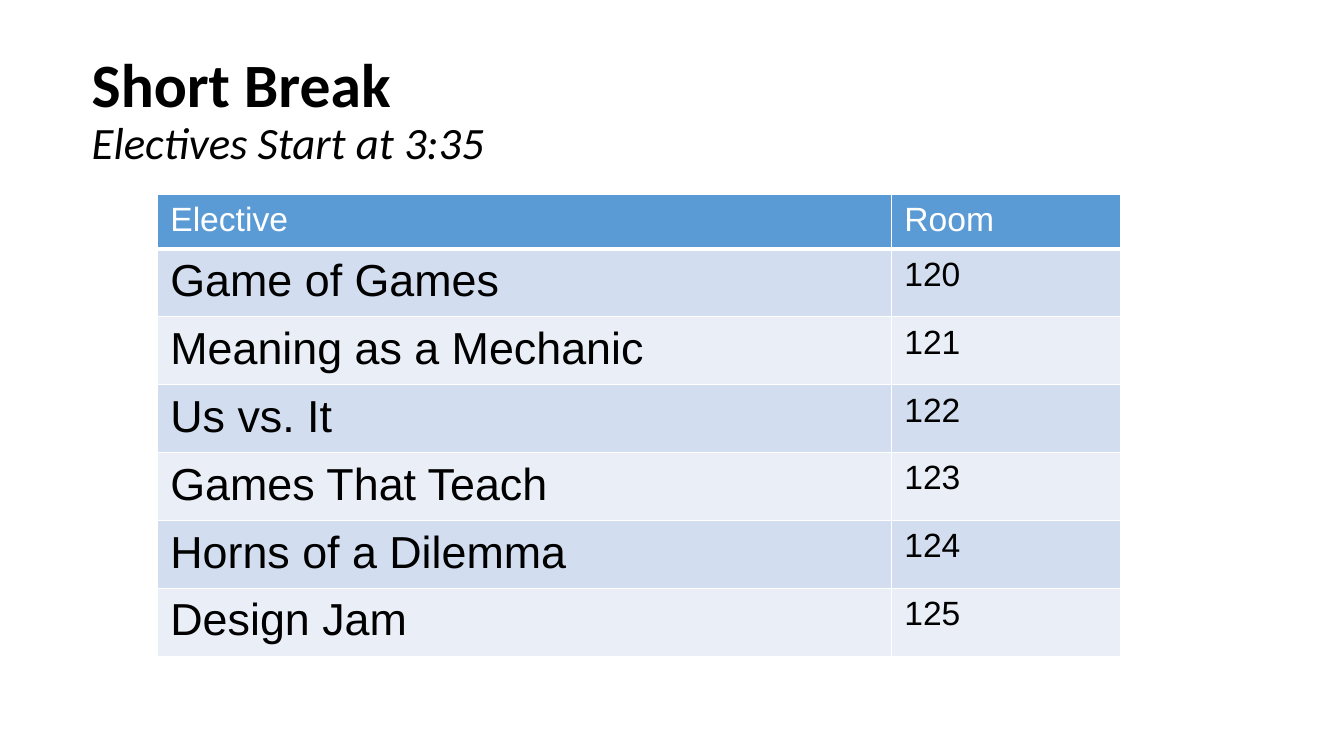
from lxml import etree
from pptx import Presentation
from pptx.dml.color import RGBColor
from pptx.enum import text
from pptx.oxml import ns
from pptx.util import Inches, Pt

BLACK = RGBColor(0x00, 0x00, 0x00)
WHITE = RGBColor(0xFF, 0xFF, 0xFF)
HEADER_BLUE = RGBColor(0x5B, 0x9B, 0xD5)
BAND_DARK = RGBColor(0xD2, 0xDE, 0xEF)
BAND_LIGHT = RGBColor(0xEA, 0xEF, 0xF7)

ELECTIVES = ["Game of Games", "Meaning as a Mechanic", "Us vs. It",
             "Games That Teach", "Horns of a Dilemma", "Design Jam"]
FIRST_ROOM = 120
INSETS = {"margin_left": Inches(0.13), "margin_right": Inches(0.13),
          "margin_top": Inches(0.07), "margin_bottom": Inches(0.07)}


def apply(target, values):
    for name, value in values.items():
        setattr(target, name, value)


def add_run(paragraph, words, color, **font_values):
    run = paragraph.add_run()
    run.text = words
    run.font.color.rgb = color
    apply(run.font, font_values)


def set_borders(cell, **widths):
    """Draw white borders; widths are points by side, in schema order."""
    properties = cell._tc.get_or_add_tcPr()
    for index, (side, points) in enumerate(widths.items()):
        line = etree.Element(ns.qn(f"a:ln{side}"), w=str(Pt(points)))
        fill = etree.SubElement(line, ns.qn("a:solidFill"))
        etree.SubElement(fill, ns.qn("a:srgbClr"), val=str(WHITE))
        properties.insert(index, line)


def add_heading(slide):
    heading = slide.shapes.add_textbox(
        Inches(0.78), Inches(0.47), Inches(11.77), Inches(1.14)).text_frame
    apply(heading, {**INSETS, "word_wrap": True,
                    "vertical_anchor": text.MSO_ANCHOR.TOP})
    paragraph = heading.paragraphs[0]
    paragraph.line_spacing = 0.9
    add_run(paragraph, "Short Break", BLACK,
            name="Calibri", size=Pt(44), bold=True)
    paragraph.add_line_break()
    add_run(paragraph, "Electives Start at 3:35", BLACK,
            name="Calibri", size=Pt(32), italic=True)


def fill_cell(cell, words, size, color, background, bottom_width):
    apply(cell, INSETS)
    cell.fill.solid()
    cell.fill.fore_color.rgb = background
    set_borders(cell, L=1, R=1, T=1, B=bottom_width)
    add_run(cell.text_frame.paragraphs[0], words, color,
            name="Arial", size=Pt(size))


def add_schedule(slide):
    schedule = slide.shapes.add_table(
        len(ELECTIVES) + 1, 2,
        Inches(1.56), Inches(1.93), Inches(9.55), Inches(4.55)).table
    for column, width in zip(schedule.columns, (7.28, 2.27)):
        column.width = Inches(width)
    for index, row in enumerate(schedule.rows):
        row.height = Inches(0.67 if index else 0.53)

    # Header row
    for cell, label in zip(schedule.rows[0].cells, ("Elective", "Room")):
        fill_cell(cell, label, 24, WHITE, HEADER_BLUE, 3)

    # Banded rows, one elective each, in consecutive rooms
    for index, elective in enumerate(ELECTIVES):
        band = BAND_LIGHT if index % 2 else BAND_DARK
        name_cell, room_cell = schedule.rows[index + 1].cells
        fill_cell(name_cell, elective, 32, BLACK, band, 1)
        fill_cell(room_cell, str(FIRST_ROOM + index), 24, BLACK, band, 1)


def main():
    deck = Presentation()
    deck.slide_width, deck.slide_height = Inches(13.33), Inches(7.5)
    slide = deck.slides.add_slide(deck.slide_layouts[6])
    add_heading(slide)
    add_schedule(slide)
    deck.save("out.pptx")


if __name__ == "__main__":
    main()
